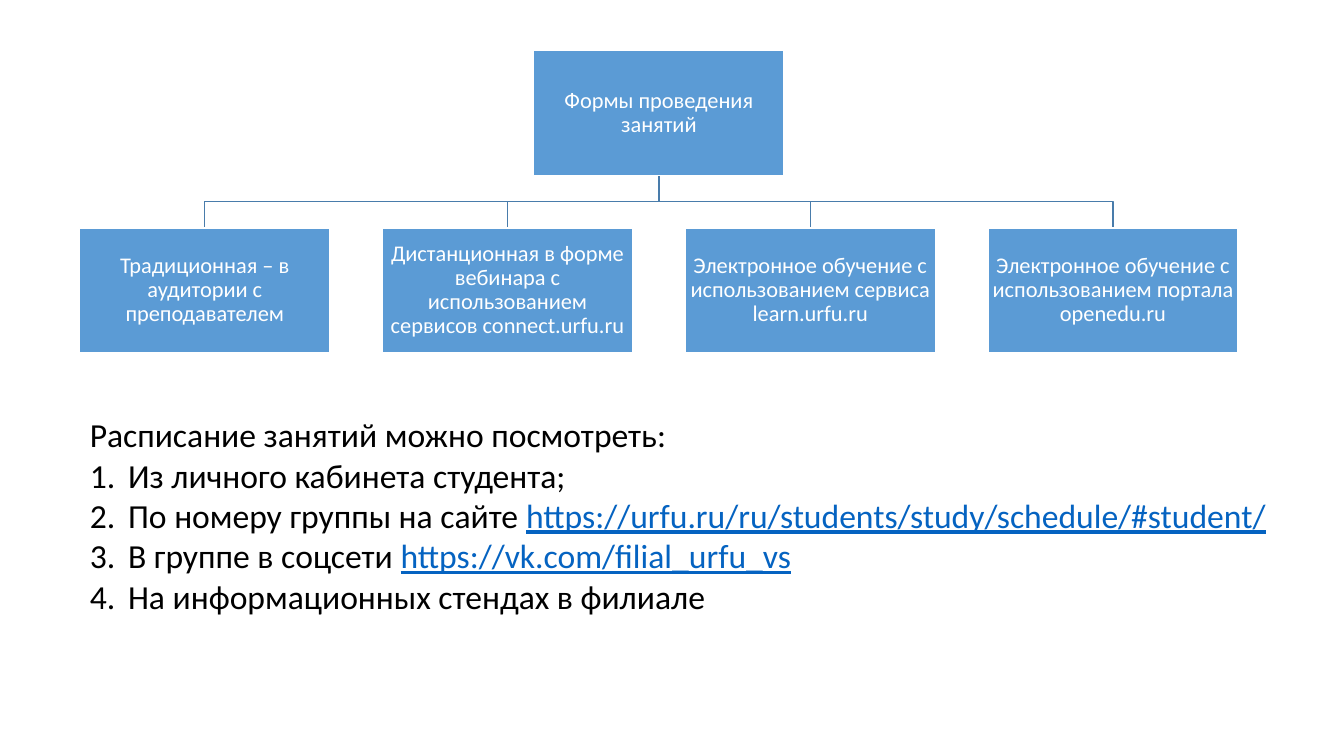
from dataclasses import dataclass

import pptx
import pptx.dml.color
import pptx.enum.shapes
import pptx.enum.text
import pptx.oxml
import pptx.oxml.ns
import pptx.shapes.autoshape
import pptx.shapes.base
import pptx.slide
import pptx.text.text
import pptx.util

COLORS = {
    "box": "5B9BD5",
    "branch": "497CAB",
    "white": "FFFFFF",
    "text": "000000",
    "link": "0563C1",
}
FONT = "Calibri"
SLIDE_WIDTH, SLIDE_HEIGHT = 13.33, 7.5
LEFT, TOP = 0.79, 0.5
CHART_WIDTH = 11.49
COLUMNS = 4
GAP_SHARE = 0.21
BOX_WIDTH = CHART_WIDTH / (COLUMNS + (COLUMNS - 1) * GAP_SHARE)
BOX_HEIGHT = BOX_WIDTH / 2
GAP = BOX_WIDTH * GAP_SHARE
BOX_INSET = 0.01
LIST_INDENT = 0.38


@dataclass(frozen=True)
class Node:
    text: str
    column: float
    row: int

    @property
    def left(self) -> float:
        return LEFT + self.column * (BOX_WIDTH + GAP)

    @property
    def top(self) -> float:
        return TOP + self.row * (BOX_HEIGHT + GAP)

    @property
    def center(self) -> float:
        return self.left + BOX_WIDTH / 2


@dataclass(frozen=True)
class Line:
    text: str
    link: str = ""
    numbered: bool = True


ROOT = Node("Формы проведения занятий", (COLUMNS - 1) / 2, 0)
FORMS = [
    Node(text, column, 1)
    for column, text in enumerate([
        "Традиционная – в аудитории с преподавателем",
        "Дистанционная в форме вебинара с использованием сервисов connect.urfu.ru",
        "Электронное обучение с использованием сервиса learn.urfu.ru",
        "Электронное обучение с использованием портала openedu.ru",
    ])
]
SCHEDULE = [
    Line("Расписание занятий можно посмотреть:", numbered=False),
    Line("Из личного кабинета студента;"),
    Line("По номеру группы на сайте ", "https://urfu.ru/ru/students/study/schedule/#student/"),
    Line("В группе в соцсети ", "https://vk.com/filial_urfu_vs"),
    Line("На информационных стендах в филиале"),
]


def inches(value: float) -> pptx.util.Length:
    return pptx.util.Inches(value)


def color(name: str) -> pptx.dml.color.RGBColor:
    return pptx.dml.color.RGBColor.from_string(COLORS[name])


def set_font(font: pptx.text.text.Font, size: float, color_name: str) -> None:
    font.name = FONT
    font.size = pptx.util.Pt(size)
    font.color.rgb = color(color_name)


def set_line(shape: pptx.shapes.autoshape.Shape, color_name: str) -> None:
    shape.shadow.inherit = False
    shape.line.color.rgb = color(color_name)
    shape.line.width = pptx.util.Pt(1)


def draw_branch(page: pptx.slide.Slide, parent: Node, child: Node) -> None:
    start = parent.top + BOX_HEIGHT
    middle = (start + child.top) / 2
    builder = page.shapes.build_freeform(inches(parent.center), inches(start))
    corners = [(parent.center, middle), (child.center, middle), (child.center, child.top)]
    builder.add_line_segments([(inches(x), inches(y)) for x, y in corners], close=False)
    branch = builder.convert_to_shape()
    branch.fill.background()
    set_line(branch, "branch")


def draw_node(page: pptx.slide.Slide, node: Node) -> None:
    box = page.shapes.add_shape(
        pptx.enum.shapes.MSO_SHAPE.RECTANGLE,
        inches(node.left), inches(node.top), inches(BOX_WIDTH), inches(BOX_HEIGHT),
    )
    box.fill.solid()
    box.fill.fore_color.rgb = color("box")
    set_line(box, "white")
    frame = box.text_frame
    frame.word_wrap = True
    frame.vertical_anchor = pptx.enum.text.MSO_ANCHOR.MIDDLE
    frame.margin_left = frame.margin_right = inches(BOX_INSET)
    frame.margin_top = frame.margin_bottom = inches(BOX_INSET)
    para = frame.paragraphs[0]
    para.text = node.text
    para.alignment = pptx.enum.text.PP_ALIGN.CENTER
    para.line_spacing = 0.9
    set_font(para.font, 16, "white")


def set_bullet(para: pptx.text.text._Paragraph, numbered: bool) -> None:
    indent = inches(LIST_INDENT) if numbered else 0
    tag = "a:buAutoNum" if numbered else "a:buNone"
    properties = para._p.get_or_add_pPr()
    properties.set("marL", str(indent))
    properties.set("indent", str(-indent))
    bullet = pptx.oxml.parse_xml(f"<{tag} {pptx.oxml.ns.nsdecls('a')}/>")
    if numbered:
        bullet.set("type", "arabicPeriod")
    properties.append(bullet)


def fill_schedule(body: pptx.shapes.base.BaseShape, lines: list[Line]) -> None:
    body.left, body.top = inches(LEFT), inches(4.06)
    body.width, body.height = inches(11.98), inches(2.12)
    frame = body.text_frame
    frame.word_wrap = True
    frame.auto_size = pptx.enum.text.MSO_AUTO_SIZE.NONE
    frame.vertical_anchor = pptx.enum.text.MSO_ANCHOR.TOP
    for index, line in enumerate(lines):
        para = frame.add_paragraph() if index else frame.paragraphs[0]
        set_bullet(para, line.numbered)
        para.space_before = pptx.util.Pt(0)
        set_font(para.font, 24, "text")
        para.add_run().text = line.text
        if line.link:
            span = para.add_run()
            span.text = line.link
            span.font.color.rgb = color("link")
            span.font.underline = True


def main() -> None:
    deck = pptx.Presentation()
    deck.slide_width, deck.slide_height = inches(SLIDE_WIDTH), inches(SLIDE_HEIGHT)
    page = deck.slides.add_slide(deck.slide_layouts[1])
    title = page.shapes.title
    title.element.getparent().remove(title.element)
    for form in reversed(FORMS):
        draw_branch(page, ROOT, form)
    for node in [ROOT, *FORMS]:
        draw_node(page, node)
    fill_schedule(page.placeholders[1], SCHEDULE)
    deck.save("out.pptx")


if __name__ == "__main__":
    main()
